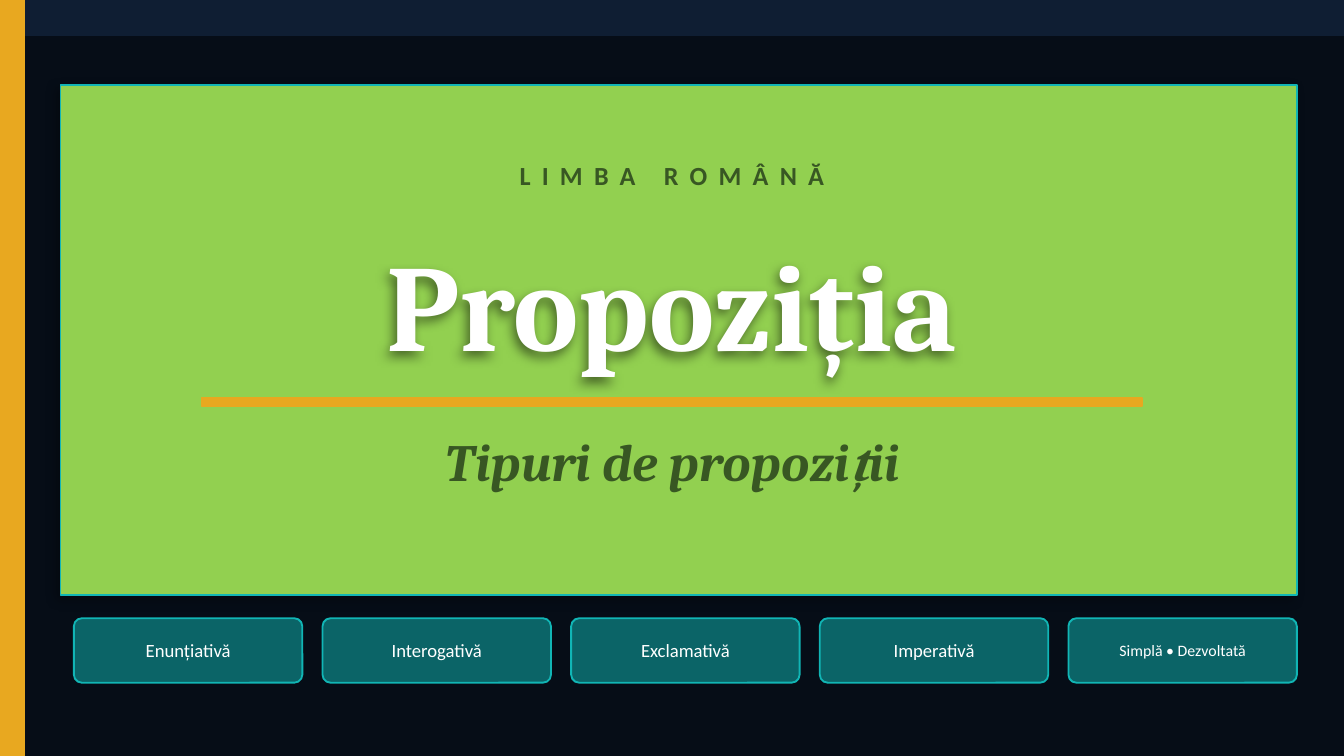
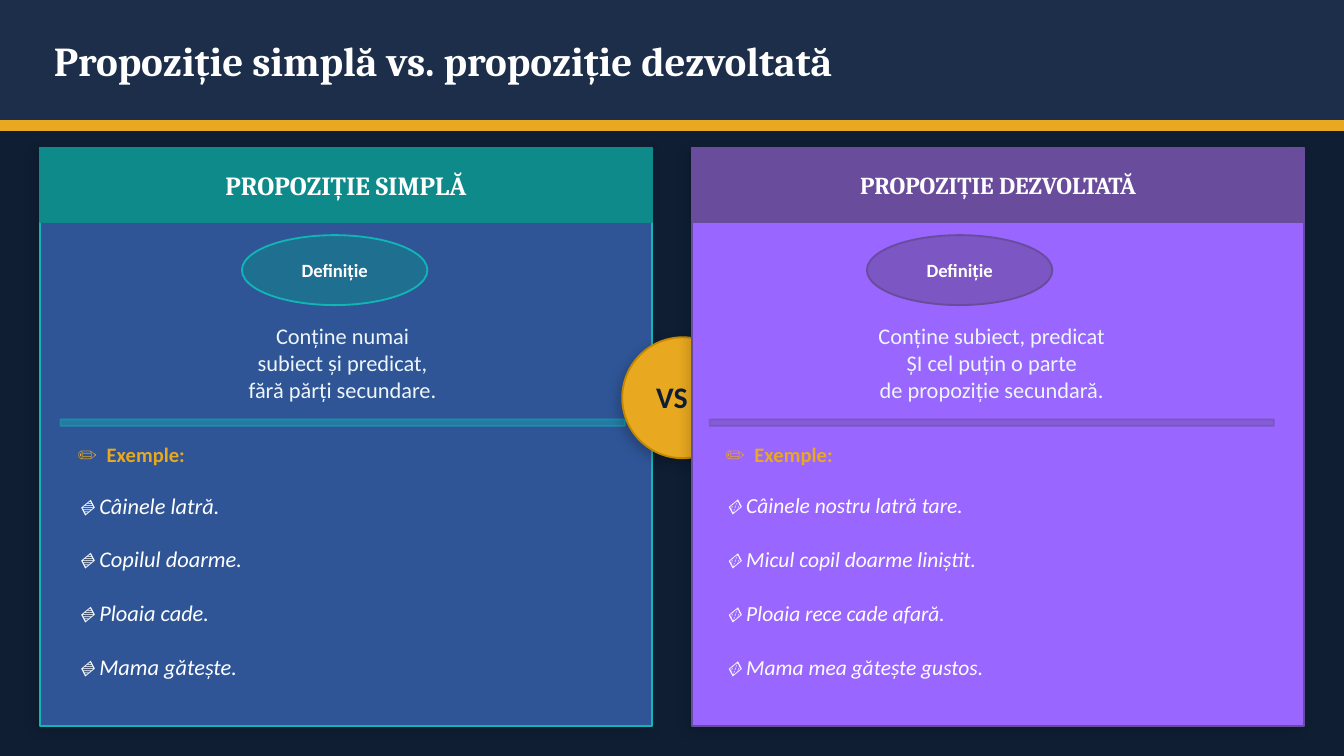
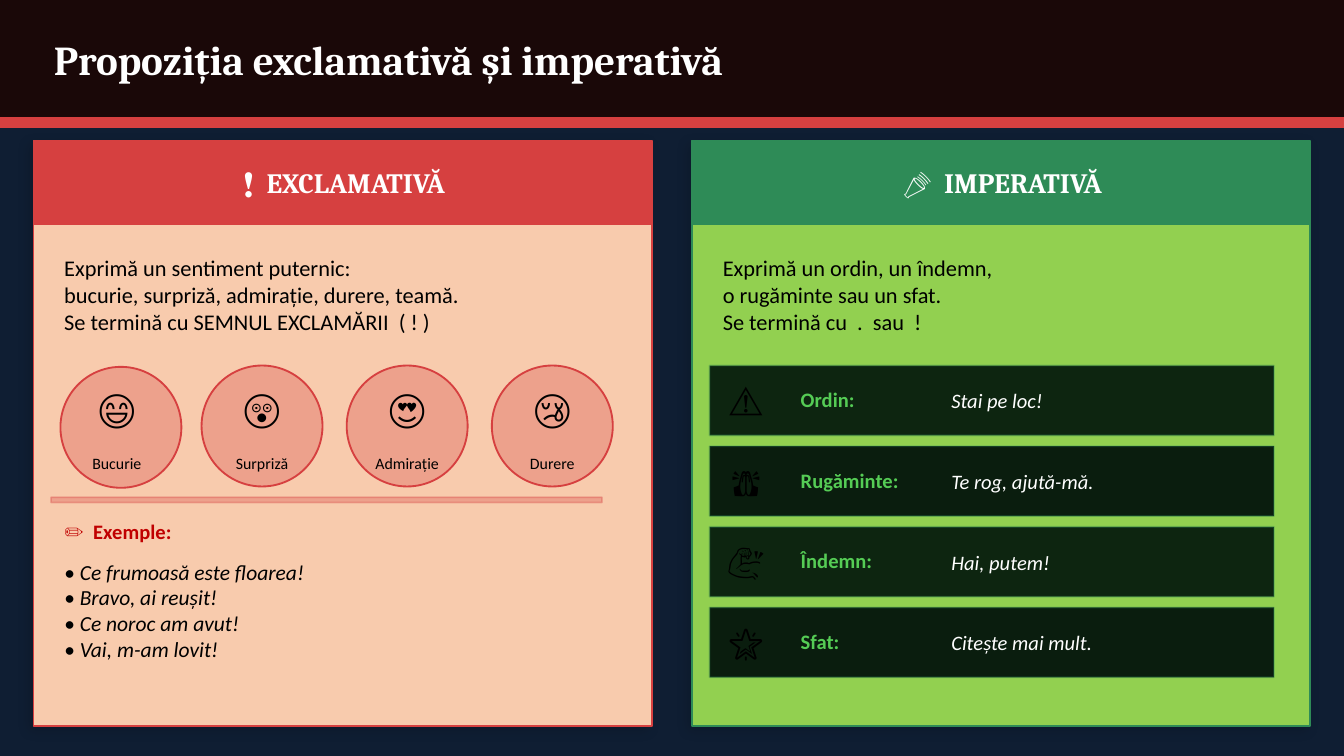
import pptx
import pptx.util
import pptx.dml.color
import pptx.enum.shapes
import pptx.enum.text
import pptx.oxml.ns
from lxml import etree

Inches = pptx.util.Inches
RGB = pptx.dml.color.RGBColor.from_string
Shape = pptx.enum.shapes.MSO_SHAPE
Align = pptx.enum.text.PP_ALIGN
qn = pptx.oxml.ns.qn

WIDE = 10
HIGH = WIDE * 9 / 16
NAVY, SLATE, BLACK, WHITE = map(RGB, ("0F1E33", "1C2E4A", "000000", "FFFFFF"))
GOLD, OCHRE, LIME, MOSS = map(RGB, ("E8A820", "C48800", "92D050", "385723"))
TEAL, AQUA, BLUE, MIST = map(RGB, ("0E8A8A", "11B5B5", "2F5597", "EDF6F9"))
PLUM, LILAC = map(RGB, ("6A4C9C", "9966FF"))
RED, WINE, BLOOD, PEACH = map(RGB, ("D64040", "1A0808", "C00000", "F8CBAD"))
GREEN, LEAF, PINE, FIR = map(RGB, ("2E8B57", "55CC55", "0D2510", "0A1D0E"))

SERIF = {"name": "Cambria", "bold": True, "color": WHITE}
PLAIN = {"name": "Calibri", "color": WHITE}
HEAD = SERIF | {"size": 22}
HERO = SERIF | {"size": 66}
KICK = PLAIN | {"size": 14, "bold": True, "color": MOSS, "space": 6}
SUB = SERIF | {"size": 28, "italic": True, "color": MOSS}
OVAL = PLAIN | {"size": 10, "bold": True}
BODY = PLAIN | {"size": 12}
BADGE = PLAIN | {"size": 16, "bold": True, "color": NAVY}
CUE = PLAIN | {"size": 11, "bold": True}
QUOTE = PLAIN | {"size": 11, "italic": True}
FACE = PLAIN | {"size": 22, "color": BLACK}
NOTE = PLAIN | {"size": 8.5, "color": BLACK}
ICON = PLAIN | {"size": 18, "color": BLACK}

CUE_TEXT = "✏️  Exemple:"

CHIPS = [("Enunțiativă", 10), ("Interogativă", 10), ("Exclamativă", 10),
         ("Imperativă", 10), ("Simplă • Dezvoltată", 8.5)]

KINDS = [
    {"x": 0.3, "head": "PROPOZIȚIE SIMPLĂ", "size": 14,
     "fill": BLUE, "edge": AQUA, "band": TEAL,
     "oval": 1.8, "dim": 50, "rule": 0.45, "list": 0.48,
     "rows": ["Conține numai", "subiect și predicat,", "fără părți secundare."],
     "mark": "🔹", "step": 12, "wide": 4.1,
     "items": ["Câinele latră.", "Copilul doarme.", "Ploaia cade.",
               "Mama gătește."]},
    {"x": 5.15, "head": "PROPOZIȚIE DEZVOLTATĂ", "size": 13,
     "fill": LILAC, "edge": PLUM, "band": PLUM,
     "oval": 6.45, "dim": 60, "rule": 5.28, "list": 5.3,
     "rows": ["Conține subiect, predicat", "ȘI cel puțin o parte",
              "de propoziție secundară."],
     "mark": "🔸", "step": 11.5, "wide": 4.2,
     "items": ["Câinele nostru latră tare.", "Micul copil doarme liniștit.",
               "Ploaia rece cade afară.", "Mama mea gătește gustos."]},
]

MOODS = [
    {"x": 0.25, "head": "❗  EXCLAMATIVĂ", "fill": PEACH, "band": RED,
     "rows": ["Exprimă un sentiment puternic:",
              "bucurie, surpriză, admirație, durere, teamă.",
              "Se termină cu SEMNUL EXCLAMĂRII  ( ! )"]},
    {"x": 5.15, "head": "📣  IMPERATIVĂ", "fill": LIME, "band": GREEN,
     "rows": ["Exprimă un ordin, un îndemn,", "o rugăminte sau un sfat.",
              "Se termină cu  .  sau  !"]},
]

# Face, name, shift of the circle right and down
FACES = [("😄", "Bucurie", 0.03, 0.01), ("😲", "Surpriză", 0, 0),
         ("😍", "Admirație", 0, 0), ("😢", "Durere", 0, 0)]

CRIES = ["• Ce frumoasă este floarea!", "• Bravo, ai reușit!",
         "• Ce noroc am avut!", "• Vai, m-am lovit!"]

ORDERS = [("⚠️", "Ordin:", "Stai pe loc!"), ("🙏", "Rugăminte:", "Te rog, ajută-mă."),
          ("💪", "Îndemn:", "Hai, putem!"), ("🌟", "Sfat:", "Citește mai mult.")]


def fade(shape, where, alpha):
    """Make the colour at the given place in the shape partly see-through."""
    for tint in shape.element.spPr.xpath(where + "a:solidFill/a:srgbClr"):
        etree.SubElement(tint, qn("a:alpha"), val=str(alpha * 1000))


def shade(shape, alpha):
    """Cast a soft black shadow down and to the left."""
    shape.shadow.inherit = False
    glow = etree.SubElement(shape.element.spPr.find(qn("a:effectLst")),
                            qn("a:outerShdw"), blurRad=str(pptx.util.Pt(6)),
                            dist=str(pptx.util.Pt(3)), dir=str(135 * 60000),
                            algn="bl", rotWithShape="0")
    tint = etree.SubElement(glow, qn("a:srgbClr"), val=str(BLACK))
    etree.SubElement(tint, qn("a:alpha"), val=str(alpha * 1000))


def draw(slide, at, fill, edge=None, kind=Shape.RECTANGLE, dim=100, thin=100, cast=0):
    """Add a shape; dim and thin are the opacity of its fill and its line."""
    shape = slide.shapes.add_shape(kind, *map(Inches, at))
    shape.shadow.inherit = False
    shape.fill.solid()
    shape.fill.fore_color.rgb = fill
    if edge is None:
        shape.line.fill.background()
    else:
        shape.line.color.rgb = edge
        shape.line.width = pptx.util.Pt(1)
    if dim < 100:
        fade(shape, "", dim)
    if thin < 100:
        fade(shape, "a:ln/", thin)
    if cast:
        shade(shape, cast)
    return shape


def fill_text(box, rows, form, align):
    frame = box.text_frame
    frame.word_wrap = True
    frame.auto_size = pptx.enum.text.MSO_AUTO_SIZE.NONE
    frame.vertical_anchor = pptx.enum.text.MSO_ANCHOR.MIDDLE
    looks = {key: form[key] for key in ("name", "bold", "italic") if key in form}
    looks["size"] = pptx.util.Pt(form["size"])
    for spot, row in enumerate(rows):
        para = frame.add_paragraph() if spot else frame.paragraphs[0]
        para.alignment = align
        run = para.add_run()
        run.text = row
        for key, value in looks.items():
            setattr(run.font, key, value)
        run.font.color.rgb = form["color"]
    if "space" in form:
        for node in box.element.xpath(".//a:rPr"):
            node.set("spc", str(form["space"] * 100))


def write(slide, at, rows, form, align=Align.LEFT):
    box = slide.shapes.add_textbox(*map(Inches, at))
    fill_text(box, [rows] if isinstance(rows, str) else rows, form, align)


def name_slide(slide, at, words, form, align=Align.LEFT):
    """Fill the title and bring it in front of what is drawn so far."""
    title = slide.shapes.title
    title.left, title.top, title.width, title.height = map(Inches, at)
    fill_text(title, [words], form, align)
    title.element.getparent().append(title.element)
    return title


def top_band(slide, words, tall, fill, rule):
    draw(slide, (0, 0, WIDE, tall), fill, fill)
    draw(slide, (0, tall, WIDE, 0.07), rule, rule)
    name_slide(slide, (0.3, 0, 9.4, tall), words, HEAD)


def card(slide, at, look, tall, size, inset):
    """Draw a panel with a coloured heading band."""
    left, top, wide, _ = at
    band = look["band"]
    draw(slide, at, look["fill"], look.get("edge", band), cast=15)
    draw(slide, (left, top, wide, tall), band, band)
    write(slide, (left + inset, top, wide - 0.04, tall), look["head"],
          SERIF | {"size": size}, Align.CENTER)


def cover(slide):
    draw(slide, (0.09, 0.27, WIDE, HIGH), BLACK, dim=55)
    draw(slide, (0, 0, 0.18, HIGH), GOLD, GOLD)
    draw(slide, (0.45, 0.63, 9.2, 3.8), LIME, AQUA, cast=30)
    write(slide, (0.6, 1.05, 8.8, 0.5), "LIMBA ROMÂNĂ", KICK, Align.CENTER)
    title = name_slide(slide, (0.6, 1.55, 8.8, 1.4), "Propoziția", HERO, Align.CENTER)
    shade(title, 50)
    draw(slide, (1.5, 2.96, 7, 0.06), GOLD, GOLD)
    write(slide, (0.6, 3.08, 8.8, 0.7), "Tipuri de propoziții", SUB, Align.CENTER)
    for spot, (word, size) in enumerate(CHIPS):
        at = (0.55 + 1.85 * spot, 4.6, 1.7, 0.48)
        chip = draw(slide, at, TEAL, AQUA, Shape.ROUNDED_RECTANGLE, dim=70)
        chip.adjustments[0] = 0.125
        write(slide, at, word, PLAIN | {"size": size}, Align.CENTER)


def kind_card(slide, kind):
    card(slide, (kind["x"], 1.1, 4.55, 4.3), kind, 0.55, kind["size"], 0.02)
    at = (kind["oval"], 1.75, 1.38, 0.52)
    draw(slide, at, kind["band"], kind["edge"], Shape.OVAL, dim=kind["dim"])
    write(slide, at, "Definiție", OVAL, Align.CENTER)
    write(slide, (kind["rule"], 2.35, 4.2, 0.7), kind["rows"],
          BODY | {"color": MIST}, Align.CENTER)
    draw(slide, (kind["rule"], 3.12, 4.2, 0.05), kind["edge"], kind["edge"],
         dim=40, thin=40)
    write(slide, (kind["list"], 3.23, 4.1, 0.3), CUE_TEXT, CUE | {"color": GOLD})
    for spot, item in enumerate(kind["items"]):
        write(slide, (kind["list"], 3.58 + 0.4 * spot, kind["wide"], 0.36),
              f"{kind['mark']} {item}", QUOTE | {"size": kind["step"]})


def versus(slide):
    top_band(slide, "Propoziție simplă vs. propoziție dezvoltată", 0.9, SLATE, GOLD)
    plain, rich = KINDS
    kind_card(slide, plain)
    # The right card covers half of the badge
    draw(slide, (4.63, 2.51, 0.9, 0.9), GOLD, OCHRE, Shape.OVAL, cast=20)
    write(slide, (4.55, 2.5, 0.9, 0.9), "VS", BADGE, Align.CENTER)
    kind_card(slide, rich)


def mood_card(slide, mood):
    card(slide, (mood["x"], 1.05, 4.6, 4.35), mood, 0.62, 15, 0.03)
    write(slide, (mood["x"] + 0.13, 1.75, 4.3, 0.88), mood["rows"],
          BODY | {"color": BLACK})


def moods(slide):
    top_band(slide, "Propoziția exclamativă și imperativă", 0.88, WINE, RED)
    cry, order = MOODS
    mood_card(slide, cry)
    for spot, (face, word, right, down) in enumerate(FACES):
        left = 0.42 + 1.08 * spot
        draw(slide, (left + right, 2.72 + down, 0.9, 0.9), RED, RED, Shape.OVAL, dim=30)
        write(slide, (left, 2.72, 0.9, 0.62), face, FACE, Align.CENTER)
        write(slide, (left - 0.1, 3.3, 1.1, 0.3), word, NOTE, Align.CENTER)
    draw(slide, (0.38, 3.7, 4.1, 0.04), RED, RED, dim=30, thin=30)
    write(slide, (0.38, 3.8, 4.1, 0.3), CUE_TEXT, CUE | {"color": BLOOD})
    write(slide, (0.38, 4.14, 4.1, 0.8), CRIES, QUOTE | {"size": 11.5, "color": BLACK})

    mood_card(slide, order)
    for spot, (icon, word, line) in enumerate(ORDERS):
        top = 2.72 + 0.6 * spot
        draw(slide, (5.28, top, 4.2, 0.52), (PINE, FIR)[spot % 2], GREEN, thin=30)
        write(slide, (5.3, top + 0.04, 0.5, 0.42), icon, ICON, Align.CENTER)
        write(slide, (5.86, top + 0.04, 1.1, 0.42), word, CUE | {"color": LEAF})
        write(slide, (6.98, top + 0.05, 2.38, 0.42), line, QUOTE)


def main():
    deck = pptx.Presentation()
    deck.slide_width, deck.slide_height = Inches(WIDE), Inches(HIGH)
    back = deck.slide_master.background.fill
    back.solid()
    back.fore_color.rgb = NAVY
    for build in (cover, versus, moods):
        build(deck.slides.add_slide(deck.slide_layouts[5]))
    deck.save("out.pptx")


if __name__ == "__main__":
    main()
